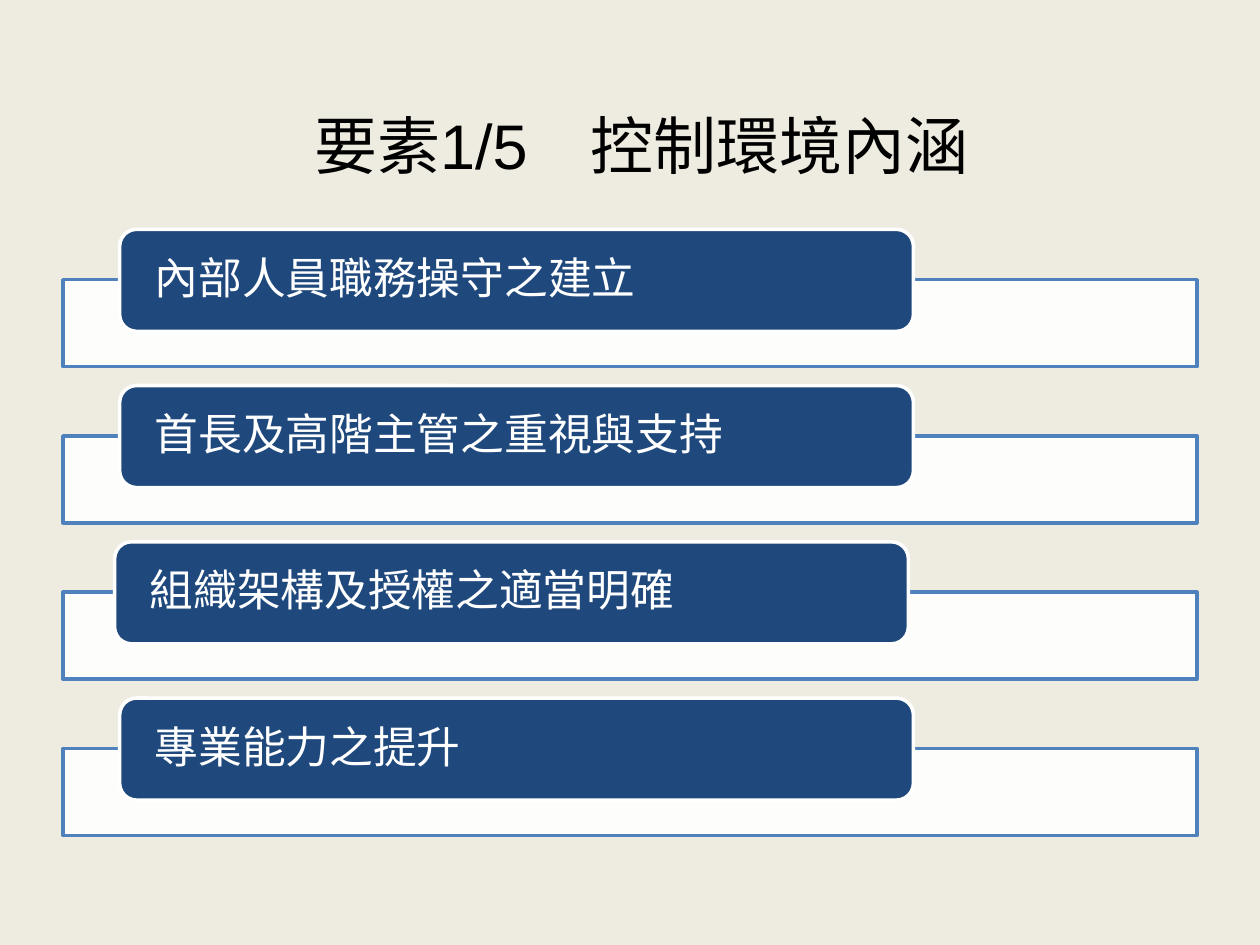
import dataclasses
import pptx
import pptx.dml.color
import pptx.enum.shapes
import pptx.enum.text
import pptx.oxml
import pptx.oxml.ns
import pptx.util

Inches = pptx.util.Inches
Pt = pptx.util.Pt
Kind = pptx.enum.shapes.MSO_SHAPE
Align = pptx.enum.text.PP_ALIGN
Anchor = pptx.enum.text.MSO_ANCHOR

COLORS = {"back": "EEECE1", "white": "FFFFFF", "edge": "4F81BD",
          "navy": "1F497D", "black": "000000"}


@dataclasses.dataclass
class Item:
    text: str
    left: float = 0.95


ITEMS = [
    Item("內部人員職務操守之建立"),
    Item("首長及高階主管之重視與支持"),
    Item("組織架構及授權之適當明確", 0.91),
    Item("專業能力之提升"),
]
TOP, STEP, DROP = 1.82, 1.24, 0.4


def color(name: str) -> pptx.dml.color.RGBColor:
    return pptx.dml.color.RGBColor.from_string(COLORS[name])


def apply(target, values: dict) -> None:
    for key, value in values.items():
        setattr(target, key, value)


def box(slide, kind, place: tuple, fill: str, line: str):
    shape = slide.shapes.add_shape(kind, *map(Inches, place))
    shape.shadow.inherit = False
    shape.fill.solid()
    shape.fill.fore_color.rgb = color(fill)
    shape.line.color.rgb = color(line)
    shape.line.width = Pt(2)
    return shape


def fade(shape, percent: int) -> None:
    tone = shape.fill._xPr.find(".//" + pptx.oxml.ns.qn("a:srgbClr"))
    tone.append(pptx.oxml.parse_xml(
        f'<a:alpha {pptx.oxml.ns.nsdecls("a")} val="{percent * 1000}"/>'))


def write(shape, text: str, size: int, tint: str, frame: dict, para: dict) -> None:
    shape.text_frame.text = text
    apply(shape.text_frame, {"word_wrap": True,
                             "vertical_anchor": Anchor.MIDDLE, **frame})
    line = shape.text_frame.paragraphs[0]
    apply(line, para)
    font = line.runs[0].font
    apply(font, {"name": "Arial", "size": Pt(size)})
    font.color.rgb = color(tint)


def draw(slide, item: Item, top: float) -> None:
    panel = box(slide, Kind.RECTANGLE, (0.5, top + DROP, 9, 0.69), "white", "edge")
    fade(panel, 90)
    label = box(slide, Kind.ROUNDED_RECTANGLE, (item.left, top, 6.3, 0.81),
                "navy", "white")
    write(label, item.text, 25, "white",
          {"margin_left": Inches(0.24), "margin_right": Inches(0.24),
           "margin_top": 0, "margin_bottom": 0},
          {"alignment": Align.LEFT, "line_spacing": 0.9})


def main() -> None:
    deck = pptx.Presentation()
    apply(deck, {"slide_width": Inches(10), "slide_height": Inches(7.5)})
    slide = deck.slides.add_slide(deck.slide_layouts[5])
    slide.background.fill.solid()
    slide.background.fill.fore_color.rgb = color("back")
    title = slide.shapes.title
    apply(title, {"left": Inches(0.59), "top": Inches(0.52),
                  "width": Inches(9), "height": Inches(1.25)})
    write(title, "要素1/5　控制環境內涵", 36, "black", {},
          {"alignment": Align.CENTER})
    for row, item in enumerate(ITEMS):
        draw(slide, item, TOP + row * STEP)
    deck.save("out.pptx")


if __name__ == "__main__":
    main()
